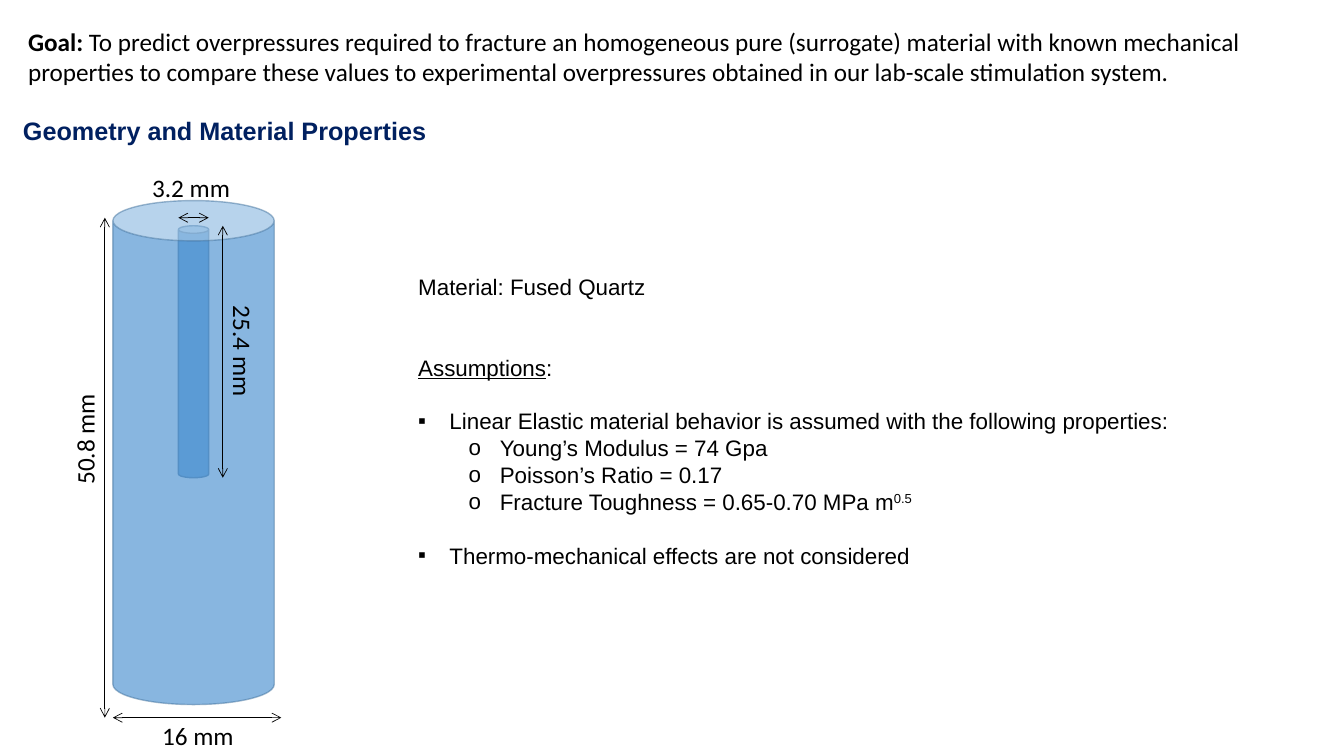
from lxml import etree
from pptx import Presentation, util as u
from pptx.dml.color import RGBColor
from pptx.enum import shapes, text
from pptx.oxml.ns import qn

Inches, Pt = u.Inches, u.Pt
COLORS = {"text": "000000", "heading": "002060", "quartz": "5B9BD5", "edge": "43739E"}
BODY_LINE = 19.2  # line pitch of the body text, points


def rgb(name):
    return RGBColor.from_string(COLORS[name])


def add_run(p, words, size, font, color="text", **formats):
    r = p.add_run()
    r.text = words
    r.font.color.rgb = rgb(color)
    for key, value in {"size": Pt(size), "name": font, **formats}.items():
        setattr(r.font, key, value)
    return r


def add_box(parent, box, wrap=True):
    tf = parent.add_textbox(*map(Inches, box)).text_frame
    tf.word_wrap = wrap
    tf.auto_size = text.MSO_AUTO_SIZE.SHAPE_TO_FIT_TEXT
    return tf


def set_alpha(fill, percent):
    color = fill._xPr.find(qn("a:solidFill"))[0]
    etree.SubElement(color, qn("a:alpha"), val=str(percent * 1000))


def add_can(parent, box, fill_alpha=100, line_alpha=100):
    can = parent.add_shape(shapes.MSO_SHAPE.CAN, *map(Inches, box))
    can.shadow.inherit = False
    can.fill.solid()
    can.fill.fore_color.rgb = rgb("quartz")
    can.line.color.rgb = rgb("edge")
    can.line.width = Pt(1)
    for fill, alpha in ((can.fill, fill_alpha), (can.line.fill, line_alpha)):
        if alpha < 100:
            set_alpha(fill, alpha)


def add_dimension(parent, x1, y1, x2, y2):
    line = parent.add_connector(shapes.MSO_CONNECTOR.STRAIGHT, *map(Inches, (x1, y1, x2, y2)))
    line.line.color.rgb = rgb("text")
    line.line.width = Pt(0.5)
    ln = line.line._get_or_add_ln()
    for end in ("a:headEnd", "a:tailEnd"):
        etree.SubElement(ln, qn(end), type="arrow")
    etree.SubElement(line._element.spPr, qn("a:effectLst"))


def add_label(parent, words, cx, cy, width, rotation=0):
    sp = parent.add_textbox(*map(Inches, (cx - width / 2, cy - 0.2, width, 0.4)))
    sp.rotation = rotation
    tf = sp.text_frame
    tf.word_wrap = False
    tf.auto_size = text.MSO_AUTO_SIZE.SHAPE_TO_FIT_TEXT
    add_run(tf.paragraphs[0], words, 18, "Calibri")


def add_bullet(p, char, margin, hanging):
    pPr = p._p.get_or_add_pPr()
    pPr.set("marL", str(Inches(margin)))
    pPr.set("indent", str(-Inches(hanging)))
    etree.SubElement(pPr, qn("a:buFont"), typeface="Arial")
    etree.SubElement(pPr, qn("a:buChar"), char=char)


def goal(s, box):
    p = add_box(s.shapes, box).paragraphs[0]
    add_run(p, "Goal: ", 18, "Calibri", bold=True)
    add_run(p, "To predict overpressures required to fracture an homogeneous pure (surrogate) "
            "material with known mechanical properties to compare these values to experimental "
            "overpressures obtained in our lab-scale stimulation system.", 18, "Calibri")


def heading(s, box):
    tf = add_box(s.shapes, box, wrap=False)
    add_run(tf.paragraphs[0], "Geometry and Material Properties", 18, "Arial", "heading", bold=True)


def specimen(s, box):
    """Cylinder filling the box, with its bore and dimensions."""
    x, y, w, h = box
    bore_w, bore_h = 0.3, 2.5
    bore_x, bore_y = x + (w - bore_w) / 2, y + 0.25
    group = s.shapes.add_group_shape().shapes

    # Bore seen through the translucent cylinder
    add_can(group, (bore_x, bore_y, bore_w, bore_h))
    add_can(group, box, fill_alpha=72, line_alpha=50)

    # Dimension arrows
    top, bottom = y + 0.17, y + h + 0.13
    depth_x = bore_x + bore_w + 0.14
    add_dimension(group, x - 0.08, top, x - 0.08, bottom)
    add_dimension(group, x, bottom, x + w + 0.07, bottom)
    add_dimension(group, bore_x, top, bore_x + bore_w, top)
    add_dimension(group, depth_x, bore_y, depth_x, bore_y + bore_h)

    # Dimension labels
    add_label(group, "50.8 mm", x - 0.28, y + 2.36, 1.11, 270)
    add_label(group, "16 mm", x + 0.85, y + h + 0.31, 0.92)
    add_label(group, "25.4 mm", depth_x + 0.2, bore_y + bore_h / 2, 1.11, 90)
    add_label(group, "3.2 mm", x + 0.78, y - 0.13, 0.98)


def assumptions(s, box):
    # Text, outline level (None is plain), blank lines above
    lines = [
        ("Material: Fused Quartz", None, 0),
        ("Assumptions", None, 2),
        ("Linear Elastic material behavior is assumed with the following properties:", 0, 1),
        ("Young’s Modulus = 74 Gpa", 1, 0),
        ("Poisson’s Ratio = 0.17", 1, 0),
        ("Fracture Toughness = 0.65-0.70 MPa m", 1, 0),
        ("Thermo-mechanical effects are not considered", 0, 1),
    ]
    tf = add_box(s.shapes, box)
    for i, (words, level, gap) in enumerate(lines):
        p = tf.add_paragraph() if i else tf.paragraphs[0]
        p.line_spacing = Pt(BODY_LINE)
        p.space_before = Pt(gap * BODY_LINE)
        if level is not None:
            p.level = level
            add_bullet(p, "▪o"[level], 0.31 + 0.5 * level, 0.31)
        r = add_run(p, words, 16, "Arial")
        if words == "Assumptions":
            r.font.underline = True
            add_run(p, ":", 16, "Arial")
        elif words.endswith("MPa m"):
            power = add_run(p, "0.5", 16, "Arial")
            power._r.get_or_add_rPr().set("baseline", "30000")


def main():
    prs = Presentation()
    prs.slide_width, prs.slide_height = Inches(13.33), Inches(7.5)
    s = prs.slides.add_slide(prs.slide_layouts[6])
    specimen(s, (1.12, 1.99, 1.6, 5))
    heading(s, (0.13, 1.09, 4.24, 0.4))
    assumptions(s, (4.05, 2.66, 7.73, 3.33))
    goal(s, (0.18, 0.21, 12.88, 0.71))
    prs.save("out.pptx")


if __name__ == "__main__":
    main()
